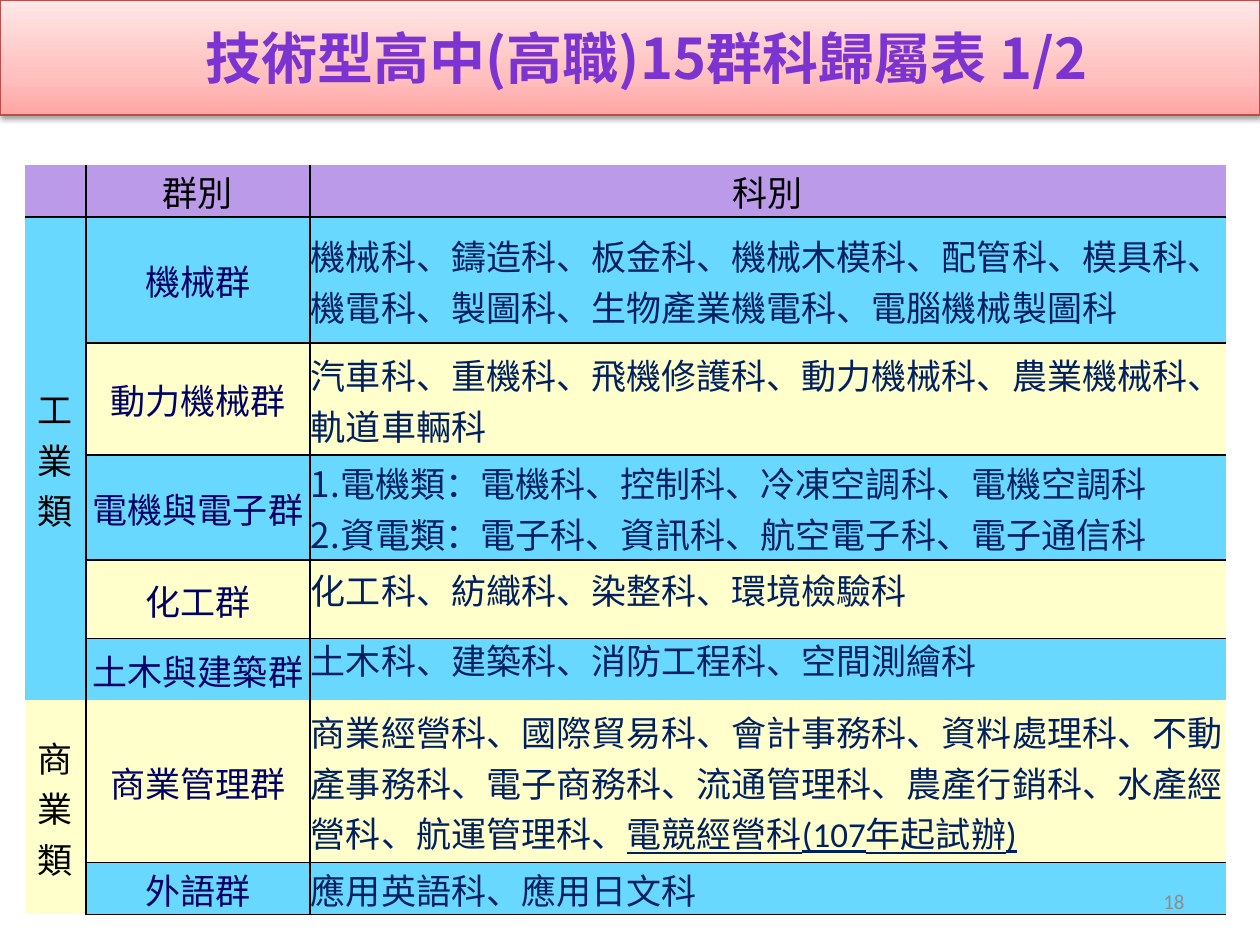
"""Build the slide listing the departments of each vocational high school group."""
import copy

from pptx import Presentation, oxml, util as u
from pptx.dml.color import RGBColor
from pptx.enum import shapes, text
from pptx.oxml import ns

EMU_PER_PX = 914400 / 126
LATIN, CJK = "Calibri", "Noto Sans CJK SC"

BLACK = RGBColor(0, 0, 0)
NAVY = RGBColor(0x00, 0x20, 0x60)
INDIGO = RGBColor(0x00, 0x00, 0x66)
PURPLE = RGBColor(0x7B, 0x34, 0xD2)
GREY = RGBColor(0x8C, 0x8C, 0x8C)
RED = RGBColor(0xBF, 0x4C, 0x48)
LILAC = RGBColor(0xBB, 0x9B, 0xE9)
BLUE = RGBColor(0x69, 0xD8, 0xFF)
CREAM = RGBColor(0xFF, 0xFF, 0xCC)
BANNER_STOPS = [
    (0, RGBColor(0xFF, 0xA6, 0xA5)),
    (0.35, RGBColor(0xFF, 0xC0, 0xBF)),
    (1, RGBColor(0xFF, 0xE7, 0xE7)),
]

COLUMN_WIDTHS = [61, 224, 916]
ROW_HEIGHTS = [50, 126, 112, 105, 79, 61, 163, 49]
CATEGORIES = [(1, 5, "工業類", BLUE), (6, 7, "商業類", CREAM)]
LAST_INDUSTRY_ROW = 5
TIGHT_ROWS = (4, 5)
GROUPS = [
    ("機械群", [["機械科、鑄造科、板金科、機械木模科、配管科、模具科、"
              "機電科、製圖科、生物產業機電科、電腦機械製圖科"]]),
    ("動力機械群", [["汽車科、重機科、飛機修護科、動力機械科、農業機械科、軌道車輛科"]]),
    ("電機與電子群", [["1.", "電機類：電機科、控制科、冷凍空調科、電機空調科"],
                ["2.", "資電類：電子科、資訊科、航空電子科、電子通信科"]]),
    ("化工群", [["化工科、紡織科、染整科、環境檢驗科"]]),
    ("土木與建築群", [["土木科、建築科、消防工程科、空間測繪科"]]),
    ("商業管理群", [["商業經營科、國際貿易科、會計事務科、資料處理科、不動產事務科、"
                "電子商務科、流通管理科、農產行銷科、水產經營科、航運管理科、",
                "電競經營科(107年起試辦)"]]),
    ("外語群", [["應用英語科、應用日文科"]]),
]


def px(length):
    """Turn pixels into EMU."""
    return u.Emu(round(length * EMU_PER_PX))


def add_span(para, wording, size, color, face=LATIN, bold=False, underline=False):
    """Add one formatted run to a paragraph."""
    span = para.add_run()
    span.text = wording
    font = span.font
    font.size, font.name, font.bold, font.underline = u.Pt(size), face, bold, underline
    font.color.rgb = color
    east_asian = oxml.parse_xml(f'<a:ea {ns.nsdecls("a")} typeface="{CJK}"/>')
    span.font._element.append(east_asian)


def add_banner(page):
    """Draw the title bar with its gradient, shadow and heading."""
    banner = page.shapes.add_shape(shapes.MSO_SHAPE.RECTANGLE, 0, 0, px(1260), px(115))
    banner.fill.gradient()
    banner.fill.gradient_angle = 90
    properties = banner._element.spPr
    stop_list = properties.find(".//" + ns.qn("a:gsLst"))
    stop_list.append(copy.deepcopy(stop_list[0]))
    for stop, (position, color) in zip(banner.fill.gradient_stops, BANNER_STOPS):
        stop.position, stop.color.rgb = position, color
    banner.line.color.rgb, banner.line.width = RED, u.Pt(0.75)
    properties.append(oxml.parse_xml(
        f'<a:effectLst {ns.nsdecls("a")}><a:outerShdw blurRad="{u.Pt(3.1)}" '
        f'dist="{u.Pt(1.6)}" dir="5400000" rotWithShape="0"><a:srgbClr val="000000">'
        '<a:alpha val="38000"/></a:srgbClr></a:outerShdw></a:effectLst>'))
    frame = banner.text_frame
    frame.word_wrap, frame.vertical_anchor = True, text.MSO_ANCHOR.MIDDLE
    frame.margin_left = px(45)
    para = frame.paragraphs[0]
    para.alignment = text.PP_ALIGN.CENTER
    add_span(para, "技術型高中(高職)15群科歸屬表 1/2", 32, PURPLE, CJK, bold=True)


def set_borders(cell, visible):
    """Rule the named sides of a cell and clear the others."""
    properties = cell._tc.get_or_add_tcPr()
    for side in "LRTB":
        paint = '<a:solidFill><a:srgbClr val="000000"/></a:solidFill>'
        if side not in visible:
            paint = "<a:noFill/>"
        properties.append(oxml.parse_xml(
            f'<a:ln{side} {ns.nsdecls("a")} w="{u.Pt(1)}">{paint}</a:ln{side}>'))


def ruled_sides(row, column):
    """Return the sides of a cell that carry a line."""
    def line_below(index):
        return index == 0 or (column > 0 and index > 0 and index != LAST_INDUSTRY_ROW)

    rules = {"L": column > 0, "R": column < 2,
             "T": line_below(row - 1), "B": line_below(row)}
    return [side for side, shown in rules.items() if shown]


def format_cell(cell, row, column, color):
    """Set the borders, fill and margins of a cell."""
    set_borders(cell, ruled_sides(row, column))
    cell.fill.solid()
    cell.fill.fore_color.rgb = color
    cell.margin_left = cell.margin_right = cell.margin_top = px(1)
    cell.margin_bottom = 0
    cell.vertical_anchor = text.MSO_ANCHOR.MIDDLE


def write_label(cell, wording, color=BLACK):
    """Write one centred label in a cell."""
    para = cell.text_frame.paragraphs[0]
    para.alignment = text.PP_ALIGN.CENTER
    add_span(para, wording, 20, color)


def write_departments(cell, lines, tight):
    """Write the department lists of one group."""
    frame = cell.text_frame
    for index, (first, *rest) in enumerate(lines):
        para = frame.add_paragraph() if index else frame.paragraphs[0]
        if tight:
            para.line_spacing = u.Pt(17)
        numbered = first.endswith(".")
        add_span(para, first, 20, NAVY, CJK if numbered else LATIN)
        for wording in rest:
            add_span(para, wording, 20, NAVY, underline=not numbered)


def add_group_table(page):
    """Add the table of categories, groups and departments."""
    table = page.shapes.add_table(
        len(ROW_HEIGHTS), len(COLUMN_WIDTHS), px(25), px(165),
        px(sum(COLUMN_WIDTHS)), px(sum(ROW_HEIGHTS))).table
    table.first_row = table.horz_banding = False
    for column, width in zip(table.columns, COLUMN_WIDTHS):
        column.width = px(width)
    for row, height in enumerate(ROW_HEIGHTS):
        table.rows[row].height = px(height)
        band = LILAC if row == 0 else BLUE if row % 2 else CREAM
        for column in range(len(COLUMN_WIDTHS)):
            format_cell(table.cell(row, column), row, column, band)
    write_label(table.cell(0, 1), "群別")
    write_label(table.cell(0, 2), "科別")
    for first, last, name, color in CATEGORIES:
        category = table.cell(first, 0)
        category.merge(table.cell(last, 0))
        category.fill.fore_color.rgb = color
        write_label(category, name)
    for row, (group, lines) in enumerate(GROUPS, 1):
        write_label(table.cell(row, 1), group, INDIGO)
        write_departments(table.cell(row, 2), lines, row in TIGHT_ROWS)


def add_page_number(page):
    """Add the page number at the lower right."""
    frame = page.shapes.add_textbox(px(903), px(876), px(294), px(50)).text_frame
    frame.word_wrap, frame.vertical_anchor = True, text.MSO_ANCHOR.MIDDLE
    para = frame.paragraphs[0]
    para.alignment = text.PP_ALIGN.RIGHT
    add_span(para, "18", 12, GREY)


def main():
    """Build and save the deck."""
    deck = Presentation()
    deck.slide_width, deck.slide_height = px(1260), px(945)
    page = deck.slides.add_slide(deck.slide_layouts[6])
    add_group_table(page)
    add_banner(page)
    add_page_number(page)
    deck.save("out.pptx")


if __name__ == "__main__":
    main()
